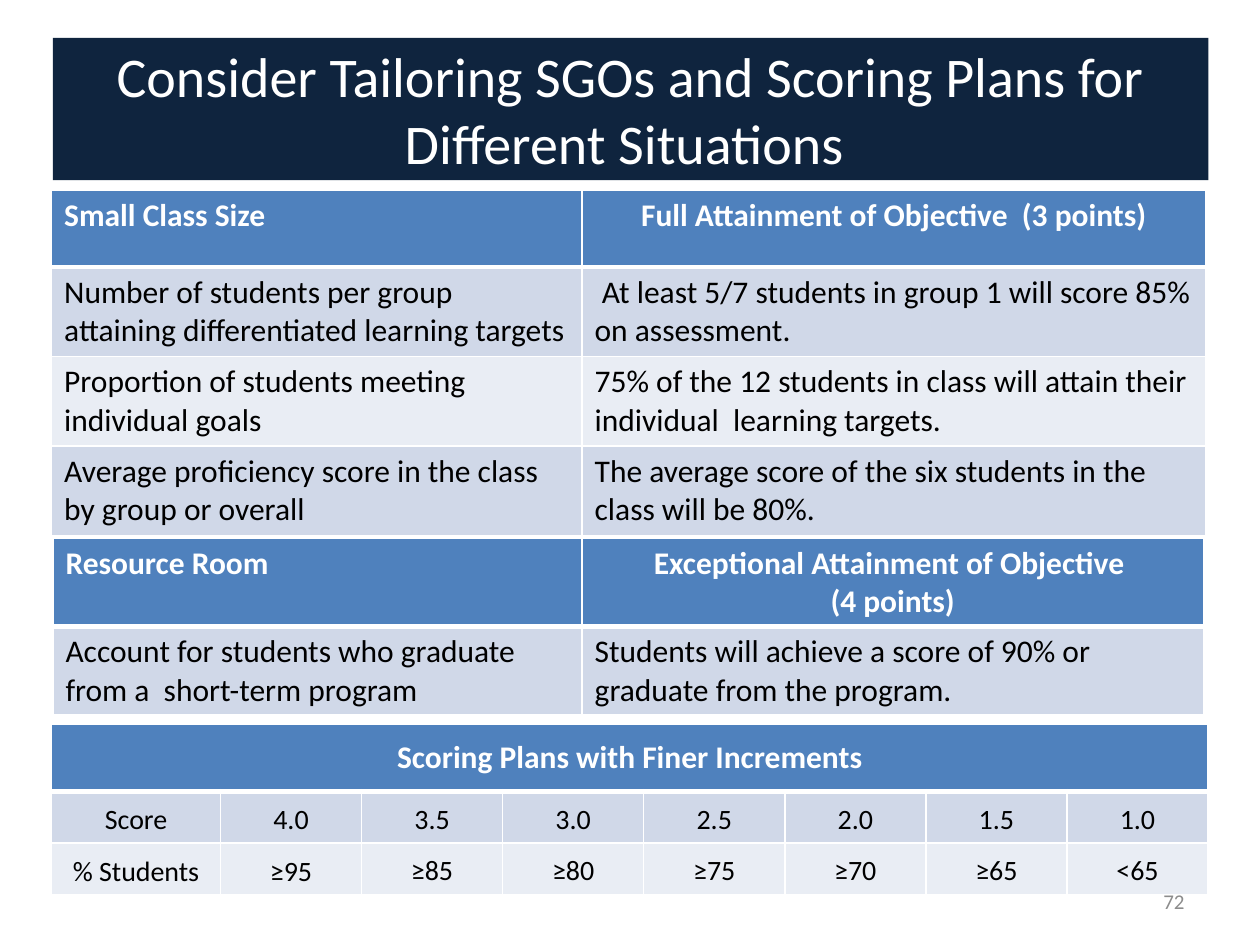
from lxml import etree
from pptx import Presentation
from pptx.dml.color import RGBColor
from pptx.enum.shapes import MSO_SHAPE
from pptx.enum.text import MSO_ANCHOR, PP_ALIGN
from pptx.oxml.ns import qn
from pptx.util import Inches, Pt

LEFT, CENTER, RIGHT = PP_ALIGN.LEFT, PP_ALIGN.CENTER, PP_ALIGN.RIGHT
TOP, MIDDLE = MSO_ANCHOR.TOP, MSO_ANCHOR.MIDDLE
RECTANGLE = MSO_SHAPE.RECTANGLE

COLORS = {"navy": "0F243E", "blue": "4F81BD", "band1": "D0D8E8", "band2": "E9EDF4",
          "white": "FFFFFF", "black": "000000", "gray": "8C8C8C"}
FONT = "Calibri"


def write(tf, text, size=18, color="black", bold=False, align=LEFT, anchor=TOP, spacing=None):
    tf.word_wrap = True
    tf.vertical_anchor = anchor
    for i, line in enumerate(text.split("\n")):
        p = tf.paragraphs[0] if i == 0 else tf.add_paragraph()
        p.alignment = align
        if spacing:
            p.line_spacing = spacing
        r = p.add_run()
        r.text = line
        r.font.name, r.font.size, r.font.bold = FONT, Pt(size), bold
        r.font.color.rgb = RGBColor.from_string(COLORS[color])


def style_cell(cell, fill, bottom=1):
    """Draw white borders, the bottom one in the given points, and fill the cell."""
    tcPr = cell._tc.get_or_add_tcPr()
    for side, width in (("L", 1), ("R", 1), ("T", 1), ("B", bottom)):
        ln = etree.SubElement(tcPr, qn(f"a:ln{side}"), w=str(Pt(width)))
        solid = etree.SubElement(ln, qn("a:solidFill"))
        etree.SubElement(solid, qn("a:srgbClr"), val=COLORS["white"])
    cell.fill.solid()
    cell.fill.fore_color.rgb = RGBColor.from_string(COLORS[fill])


prs = Presentation()
prs.slide_width, prs.slide_height = Inches(10), Inches(7.5)
s = prs.slides.add_slide(prs.slide_layouts[6])

# Slide number
sp = s.shapes.add_textbox(Inches(7.17), Inches(6.95), Inches(2.33), Inches(0.4))
write(sp.text_frame, "72", size=12, color="gray", align=RIGHT, anchor=MIDDLE)

# Title band
sp = s.shapes.add_shape(RECTANGLE, Inches(0.42), Inches(0.3), Inches(9.17), Inches(1.13))
sp.shadow.inherit = False
sp.fill.solid()
sp.fill.fore_color.rgb = RGBColor.from_string(COLORS["navy"])
sp.line.fill.background()
write(sp.text_frame, "Consider Tailoring SGOs and Scoring Plans for Different Situations ",
      size=32, color="white", align=CENTER, anchor=MIDDLE)

# Tables: left, top, column widths, row heights, rows of text
class_size = (0.41, 1.51, [4.21, 4.95], [0.61, 0.71, 0.71, 0.71], [
    ["Small Class Size", "Full Attainment of Objective  (3 points)"],
    ["Number of students per group attaining differentiated learning targets",
     " At least 5/7 students in group 1 will score 85% on assessment."],
    ["Proportion of students meeting individual goals",
     "75% of the 12 students in class will attain their individual  learning targets."],
    ["Average proficiency score in the class by group or overall",
     "The average score of the six students in the class will be 80%."],
])
resource_room = (0.42, 4.27, [4.2, 4.93], [0.7, 0.7], [
    ["Resource Room", "Exceptional Attainment of Objective \n(4 points)"],
    ["Account for students who graduate from a  short-term program",
     "Students will achieve a score of 90% or graduate from the program."],
])
scoring = (0.41, 5.75, [1.34] + [1.12] * 7, [0.53, 0.41, 0.41], [
    ["Scoring Plans with Finer Increments"] + [""] * 7,
    ["Score", "4.0", "3.5", "3.0", "2.5", "2.0", "1.5", "1.0"],
    ["% Students", "≥95", "≥85", "≥80", "≥75", "≥70", "≥65", "<65"],
])

for spec in (class_size, resource_room, scoring):
    left, top, widths, heights, rows = spec
    is_scoring = spec is scoring
    table = s.shapes.add_table(len(rows), len(widths), Inches(left), Inches(top),
                               Inches(sum(widths)), Inches(sum(heights))).table
    for column, width in zip(table.columns, widths):
        column.width = Inches(width)
    for row, height in zip(table.rows, heights):
        row.height = Inches(height)
    if is_scoring:
        table.cell(0, 0).merge(table.cell(0, len(widths) - 1))

    for i, row in enumerate(rows):
        header = i == 0
        for j, text in enumerate(row):
            cell = table.cell(i, j)
            fill = "blue" if header else "band1" if i % 2 else "band2"
            style_cell(cell, fill, bottom=3 if header else 1)
            if not text:
                continue
            compact = is_scoring and not header
            if compact:
                cell.margin_left = cell.margin_right = Inches(0.07 if j < 2 else 0)
                cell.margin_top = Inches(0.01 if j < 2 else 0)
                cell.margin_bottom = 0
            cell.vertical_anchor = MIDDLE if is_scoring else TOP
            write(cell.text_frame, text, size=16 if compact else 18,
                  color="white" if header else "black", bold=header,
                  align=CENTER if is_scoring or (header and j == 1) else LEFT,
                  anchor=None, spacing=1.15 if compact else None)

prs.save("out.pptx")
